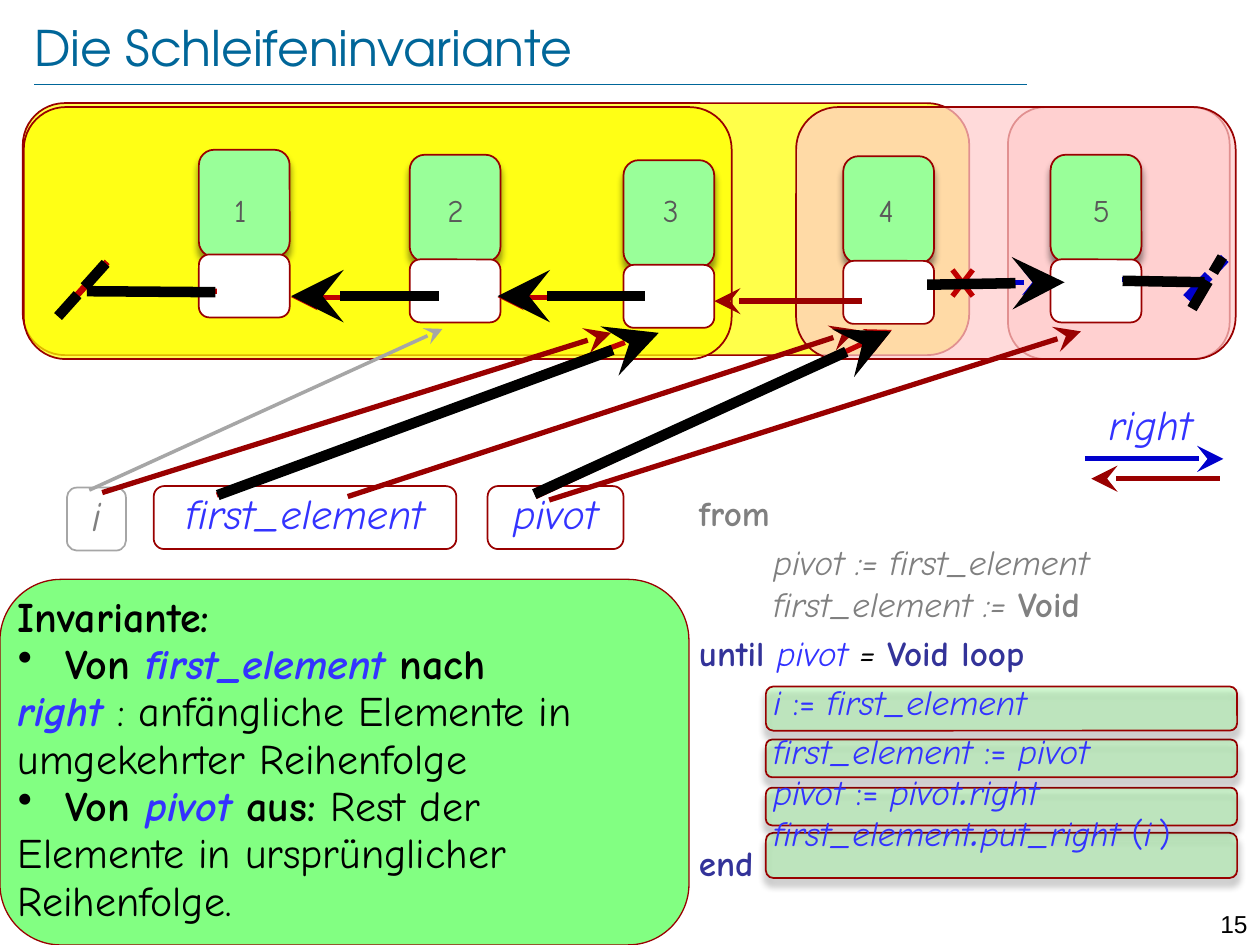
from lxml import etree
from pptx import Presentation
from pptx.dml.color import RGBColor
from pptx.enum.dml import MSO_LINE
from pptx.enum.shapes import MSO_CONNECTOR, MSO_SHAPE
from pptx.enum.text import MSO_ANCHOR, PP_ALIGN
from pptx.oxml.ns import qn
from pptx.util import Cm, Pt

ROUNDED = MSO_SHAPE.ROUNDED_RECTANGLE
STRAIGHT = MSO_CONNECTOR.STRAIGHT
DOTTED = MSO_LINE.SQUARE_DOT
MIDDLE, TOP = MSO_ANCHOR.MIDDLE, MSO_ANCHOR.TOP
LEFT, CENTER, RIGHT = PP_ALIGN.LEFT, PP_ALIGN.CENTER, PP_ALIGN.RIGHT

THEME = {
    "title": "006699", "black": "000000", "gray": "808080", "digit": "595959",
    "faded": "A6A6A6", "border": "990000", "red": "C00000", "blue": "0000CC",
    "name": "3333FF", "keyword": "333399", "white": "FFFFFF", "pink": "FFCCCC",
    "yellow": "FFFF00", "cell": "99FF99", "panel": "66FF66",
    "font": "Comic Neue", "title_font": "TeX Gyre Adventor", "page_font": "Arial",
    "title_size": 28, "label_size": 24, "code_size": 20, "digit_size": 18,
    "page_size": 14, "dot_size": 32, "gap_size": 12,
}

# Text styles: colour, bold, italic
STYLES = {
    "done": ("gray", False, True), "done_key": ("gray", True, False),
    "key": ("keyword", True, False), "name": ("name", False, True),
    "sign": ("name", False, False), "equals": ("black", False, True),
    "strong": ("black", True, False), "plain": ("black", False, False),
    "strong_name": ("name", True, True), "digit": ("digit", False, False),
    "title": ("title", False, False),
}

# Regions: left, top, width, colour
REGIONS = [(20.32, 2.16, 4.47, "pink"), (0.46, 2.08, 19.08, "yellow"),
           (16.05, 2.16, 8.86, "pink"), (0.48, 2.16, 14.27, "yellow")]
STEP_BOXES = [(16.79, 0.91), (15.88, 0.76), (14.91, 0.76), (13.84, 0.89)]
CELLS = [(4.01, 3.02), (8.26, 3.12), (12.57, 3.23), (17, 3.15), (21.18, 3.12)]
CELL_WIDTH, CELL_HEIGHT, LINK_DROP, LINK_HEIGHT = 1.83, 2.16, 2.11, 1.27
DIGIT_LEFT, DIGIT_STEP = 4.45, 4.34

# Variables: text, left, top, width, border, style
VARIABLES = [("first_element", 3.1, 9.8, 6.1, "border", "name"),
             ("pivot", 9.83, 9.8, 2.74, "border", "name"),
             ("i", 1.35, 9.83, 1.19, "faded", "done")]

# Lines: start x, start y, end x, end y, colour, width, ending
HIDDEN_LINK = (18.34, 5.69, 21.13, 5.69, "blue", 3, "arrow")
LINKS = [
    (22.61, 5.64, 24.1, 5.64, "blue", 3, "plain"),
    (23.93, 6.02, 24.69, 5.21, "blue", 6, "dots"),
    (21.87, 9.25, 24.66, 9.25, "blue", 3, "arrow"),
    (1.8, 9.88, 8.92, 6.63, "faded", 2, "arrow"),
    (2.16, 5.28, 1.19, 6.35, "red", 3.75, "dots"),
    (4.37, 9.98, 13.06, 6.73, "red", 3, "arrow"),
    (10.8, 10.01, 17.98, 6.65, "red", 3, "arrow"),
    (4.37, 5.87, 1.75, 5.84, "red", 3, "plain"),
    (2.06, 9.93, 12.32, 6.71, "border", 3, "arrow"),
    (7.01, 10.01, 17.27, 6.65, "border", 3, "arrow"),
    (11.07, 10.08, 21.79, 6.68, "border", 3, "arrow"),
    (17.37, 6.07, 14.4, 6.07, "border", 3, "arrow"),
    (19.61, 5.97, 19.2, 5.44, "red", 3, "plain"),
    (19.2, 5.97, 19.61, 5.44, "red", 3, "plain"),
    (8.84, 5.99, 5.87, 5.99, "red", 3, "arrow"),
    (13, 5.99, 10.03, 5.99, "red", 3, "arrow"),
    (24.59, 9.65, 22, 9.65, "border", 3, "arrow"),
    (4.39, 9.98, 13.28, 6.71, "black", 6, "arrow"),
    (8.84, 5.97, 5.87, 5.97, "black", 6, "arrow"),
    (13, 5.97, 10.03, 5.97, "black", 6, "arrow"),
    (2.13, 5.31, 1.17, 6.38, "black", 6, "dots"),
    (4.34, 5.89, 1.75, 5.87, "black", 6, "plain"),
    (10.77, 9.96, 17.96, 6.68, "black", 6, "arrow"),
    (18.69, 5.74, 21.46, 5.69, "black", 6, "arrow"),
    (24.03, 6.22, 24.64, 5.18, "black", 6, "dots"),
    (22.63, 5.66, 24.28, 5.69, "black", 6, "plain"),
]

# Code: line spacing, then runs of style, text and optional size
CODE = [
    (1, [("done_key", "from")]),
    (1, [("done", "\tpivot := first_element"), ("done", "\n"),
         ("done", "\tfirst_element := "), ("done_key", "Void")]),
    (1, [("key", "until "), ("name", "pivot"), ("equals", " = "), ("key", "Void loop")]),
    (1, [("name", "\ti "), ("sign", ":="), ("name", " first_element")]),
    (1, [("name", "\tfirst_element "), ("sign", ":= "), ("name", "pivot")]),
    (0.5, [("name", "\tpivot "), ("sign", ":= "), ("name", "pivot"),
           ("name", ".", "dot_size"), ("name", "right")]),
    (0.5, [("name", "\tfirst_element"), ("name", ".", "dot_size"), ("name", "put_right "),
           ("sign", "("), ("name", "i"), ("name", " ", "gap_size"), ("sign", ")")]),
    (0.5, [("key", "end")]),
]

# Invariant: bulleted or not, then runs
INVARIANT = [
    (False, [("strong", "Invariante:")]),
    (True, [("strong", "Von "), ("strong_name", "first_element "), ("strong", "nach")]),
    (False, [("strong_name", "right "), ("plain", ": anfängliche Elemente in")]),
    (False, [("plain", "umgekehrter Reihenfolge")]),
    (True, [("strong", "Von "), ("strong_name", "pivot "), ("strong", "aus: "),
            ("plain", "Rest der")]),
    (False, [("plain", "Elemente in ursprünglicher")]),
    (False, [("plain", "Reihenfolge.")]),
]


def color(name):
    return RGBColor.from_string(THEME[name])


def add_xml(parent, tag, **attributes):
    return etree.SubElement(parent, qn(tag), {k: str(v) for k, v in attributes.items()})


def add_rounded(slide, box, fill, border="border", opacity=100, shadow=False, width=1):
    shape = slide.shapes.add_shape(ROUNDED, *map(Cm, box))
    shape.shadow.inherit = False
    shape.fill.solid()
    shape.fill.fore_color.rgb = color(fill)
    shape.line.color.rgb = color(border)
    shape.line.width = Pt(width)
    properties = shape._element.spPr
    if opacity < 100:
        fill_color = properties.find(qn("a:solidFill"))[0]
        add_xml(fill_color, "a:alpha", val=opacity * 1000)
    if shadow:
        outer = add_xml(properties.find(qn("a:effectLst")), "a:outerShdw", blurRad=Pt(4),
                        dist=Pt(4), dir=5400000, rotWithShape=0)
        add_xml(add_xml(outer, "a:srgbClr", val=THEME["black"]), "a:alpha", val=43000)
    return shape


def add_line(slide, x1, y1, x2, y2, line_color, width, ending):
    line = slide.shapes.add_connector(STRAIGHT, Cm(x1), Cm(y1), Cm(x2), Cm(y2))
    line.line.color.rgb = color(line_color)
    line.line.width = Pt(width)
    if ending == "dots":
        line.line.dash_style = DOTTED
    elif ending == "arrow":
        add_xml(line.line._get_or_add_ln(), "a:tailEnd", type="stealth", w="lg", len="lg")
    add_xml(line._element.spPr, "a:effectLst")


def prepare_frame(shape, anchor=MIDDLE, insets=(0, 0)):
    """Return the wrapped text frame with horizontal and vertical insets in cm."""
    frame = shape.text_frame
    frame.word_wrap = True
    frame.vertical_anchor = anchor
    frame.margin_left = frame.margin_right = Cm(insets[0])
    frame.margin_top = frame.margin_bottom = Cm(insets[1])
    return frame


def next_paragraph(frame, index, spacing):
    paragraph = frame.add_paragraph() if index else frame.paragraphs[0]
    paragraph.alignment = LEFT
    paragraph.line_spacing = spacing
    paragraph.space_before = Pt(4 if index else 0)
    return paragraph


def style_run(run, style, size, font="font"):
    run.font.name, run.font.size = THEME[font], Pt(THEME[size])
    name, run.font.bold, run.font.italic = STYLES[style]
    run.font.color.rgb = color(name)


def add_runs(paragraph, runs, base_size):
    for style, text, *size in runs:
        if text == "\n":
            paragraph.add_line_break()
            continue
        run = paragraph.add_run()
        run.text = text
        style_run(run, style, size[0] if size else base_size)


def write_label(shape, text, style, size, align=CENTER, font="font", spacing=0.8, **frame_options):
    paragraph = prepare_frame(shape, **frame_options).paragraphs[0]
    paragraph.text = text
    paragraph.alignment = align
    paragraph.line_spacing = spacing
    style_run(paragraph.runs[0], style, size, font)


def add_text_box(slide, *box):
    return slide.shapes.add_textbox(*map(Cm, box))


def write_code(slide):
    frame = prepare_frame(add_text_box(slide, 13.84, 9.78, 11.28, 8.76), TOP, (0.25, 0.13))
    for index, (spacing, runs) in enumerate(CODE):
        paragraph = next_paragraph(frame, index, spacing)
        tabs = add_xml(paragraph._p.get_or_add_pPr(), "a:tabLst")
        add_xml(tabs, "a:tab", pos=Cm(1.5), algn="l")
        add_runs(paragraph, runs, "code_size")


def write_invariant(slide):
    panel = add_rounded(slide, (0, 11.68, 13.89, 7.37), "panel", opacity=81, width=0.75)
    frame = prepare_frame(panel)
    for index, (bulleted, runs) in enumerate(INVARIANT):
        paragraph = next_paragraph(frame, index, 0.8)
        if bulleted:
            properties = paragraph._p.get_or_add_pPr()
            properties.set("marL", str(Cm(0.97)))
            properties.set("indent", str(-Cm(0.97)))
            add_xml(properties, "a:buChar", char="•")
        add_runs(paragraph, runs, "label_size")


def main():
    deck = Presentation()
    deck.slide_width, deck.slide_height = Cm(25.4), Cm(19.05)
    slide = deck.slides.add_slide(deck.slide_layouts[6])

    add_line(slide, 0.69, 1.7, 20.7, 1.7, "title", 0.25, "plain")
    write_label(add_text_box(slide, 24, 18.19, 1.4, 0.61), "15", "plain", "page_size", RIGHT,
                "page_font", 1, anchor=TOP, insets=(0.25, 0.13))
    for left, top, width, fill in REGIONS:
        add_rounded(slide, (left, top, width, 5.08), fill, opacity=71)
    for top, height in STEP_BOXES:
        add_rounded(slide, (15.44, top, 9.5, height), "cell", opacity=39, shadow=True)
    write_label(add_text_box(slide, 0.69, 0.33, 22.08, 1.22), "Die Schleifeninvariante",
                "title", "title_size", LEFT, "title_font", 1)
    write_code(slide)

    add_line(slide, *HIDDEN_LINK)
    for left, top in CELLS:
        add_rounded(slide, (left, top, CELL_WIDTH, CELL_HEIGHT), "cell", shadow=True)
        add_rounded(slide, (left, top + LINK_DROP, CELL_WIDTH, LINK_HEIGHT), "white")
    for text, left, top, width, border, style in VARIABLES:
        variable = add_rounded(slide, (left, top, width, 1.27), "white", border)
        write_label(variable, text, style, "label_size", insets=(0, 0.13))
    write_label(add_text_box(slide, 21.82, 8.1, 2.74, 1.07), "right", "name", "label_size",
                insets=(0, 0.13))
    for index in range(len(CELLS)):
        digit = add_text_box(slide, DIGIT_LEFT + index * DIGIT_STEP, 3.76, 0.79, 1.07)
        write_label(digit, str(index + 1), "digit", "digit_size", insets=(0, 0.13))
    for link in LINKS:
        add_line(slide, *link)
    write_invariant(slide)
    deck.save("out.pptx")


if __name__ == "__main__":
    main()
